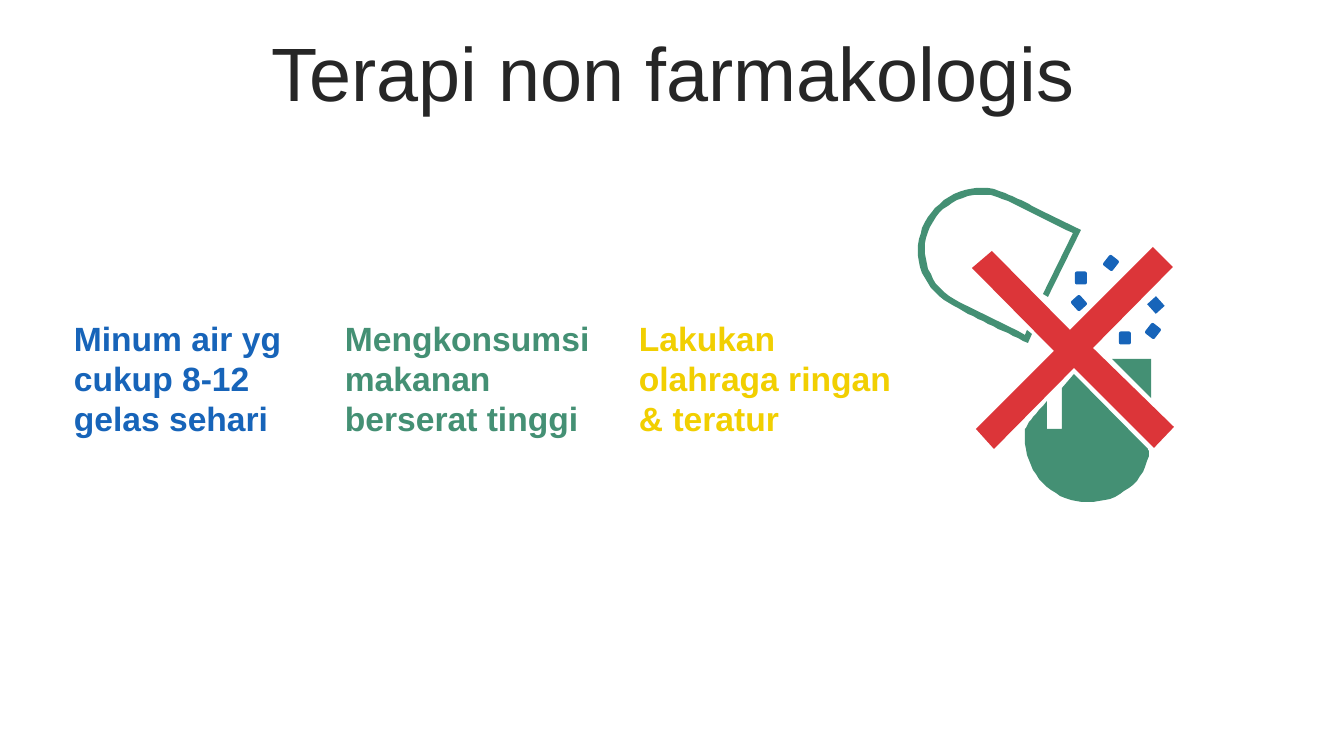
from pptx import Presentation
from pptx.dml.color import RGBColor
from pptx.enum.shapes import MSO_SHAPE as Preset
from pptx.enum.text import MSO_ANCHOR as Anchor, PP_ALIGN as Align
from pptx.util import Pt

PX = 914400 / 100.8
BLUE, GREEN, YELLOW, RED, DARK = "1764B9", "449074", "F1CF01", "DC3539", "262626"

presentation = Presentation()
presentation.slide_width = round(1344 * PX)
presentation.slide_height = round(756 * PX)
slide = presentation.slides.add_slide(presentation.slide_layouts[6])


def paint(shape, colour):
    shape.shadow.inherit = False
    shape.fill.solid()
    shape.fill.fore_color.rgb = RGBColor.from_string(colour)
    shape.line.fill.background()


def add_outline(steps, colour):
    """Two numbers make a corner; six make a Bézier curve, sampled as short lines."""
    points = []
    for step in steps:
        if len(step) == 2:
            points.append(step)
            continue
        (x0, y0), (x1, y1, x2, y2, x3, y3) = points[-1], step
        for i in range(1, 17):
            t = i / 16
            a, b, c, d = (1 - t) ** 3, 3 * t * (1 - t) ** 2, 3 * t * t * (1 - t), t ** 3
            points.append((a * x0 + b * x1 + c * x2 + d * x3,
                           a * y0 + b * y1 + c * y2 + d * y3))
    builder = slide.shapes.build_freeform(*points[0], scale=PX)
    builder.add_line_segments(points[1:], close=True)
    paint(builder.convert_to_shape(), colour)


# Crossed-out capsule
cross = [(1154, 448), (1074, 368), (994, 449), (976, 429), (1054, 351), (972, 268),
         (992, 251), (1070, 330), (1153, 247), (1173, 267), (1093, 348), (1174, 427)]
lower_half = [(1062, 429), (1062, 388), (1074, 374), (1147, 448),
              (1149, 450, 1149, 453, 1149, 456), (1142, 486, 1113, 505, 1082, 502),
              (1051, 499, 1028, 473, 1025, 444), (1024, 424, 1023, 430, 1047, 401),
              (1047, 429)]
upper_half = [(1081, 230), (1048, 297), (1043, 294), (1073, 233), (1066, 230), (1008, 201),
              (978, 186, 943, 199, 930, 227), (917, 255, 929, 287, 959, 302),
              (1018, 331), (1025, 335), (1027, 330), (1032, 334), (1028, 343),
              (1001, 330, 974, 318, 949, 303), (920, 287, 910, 251, 925, 222),
              (940, 194, 975, 180, 1005, 193), (1017, 198, 1029, 204, 1040, 210)]
lower_corner = [(1112, 359), (1151, 359), (1151, 398)]
for steps, colour in [(cross, RED), (lower_half, GREEN), (upper_half, GREEN),
                      (lower_corner, GREEN)]:
    add_outline(steps, colour)

# Granules: centre, rotation, preset
for x, y, rotation, preset in [
    (1081, 278, 0, Preset.ROUNDED_RECTANGLE),
    (1111, 263, 38, Preset.ROUNDED_RECTANGLE),
    (1079, 303, 318, Preset.ROUNDED_RECTANGLE),
    (1156, 305, 318, Preset.RECTANGLE),
    (1125, 338, 0, Preset.ROUNDED_RECTANGLE),
    (1153, 331, 38, Preset.ROUNDED_RECTANGLE),
]:
    granule = slide.shapes.add_shape(preset, round((x - 6) * PX), round((y - 6.5) * PX),
                                     round(12 * PX), round(13 * PX))
    granule.rotation = rotation
    paint(granule, BLUE)

# Title and the three recommendations
for text, left, top, width, height, size, colour, bold, align in [
    ("Terapi non farmakologis", 35, 37, 1276, 80, 54, DARK, False, Align.CENTER),
    ("Mengkonsumsi makanan berserat tinggi", 335, 312, 294, 132, 24, GREEN, True, Align.LEFT),
    ("Lakukan olahraga ringan & teratur", 629, 312, 278, 132, 24, YELLOW, True, Align.LEFT),
    ("Minum air yg cukup 8-12 gelas sehari", 64, 312, 285, 132, 24, BLUE, True, Align.LEFT),
]:
    box = slide.shapes.add_textbox(*(round(n * PX) for n in (left, top, width, height)))
    frame = box.text_frame
    frame.word_wrap = True
    frame.vertical_anchor = Anchor.MIDDLE
    paragraph = frame.paragraphs[0]
    paragraph.alignment = align
    if size == 54:
        paragraph.line_spacing = 0.9
        paragraph.space_before = Pt(10)
    run = paragraph.add_run()
    run.text = text
    run.font.name = "Arial"
    run.font.size = Pt(size)
    run.font.bold = bold
    run.font.color.rgb = RGBColor.from_string(colour)

presentation.save("out.pptx")
